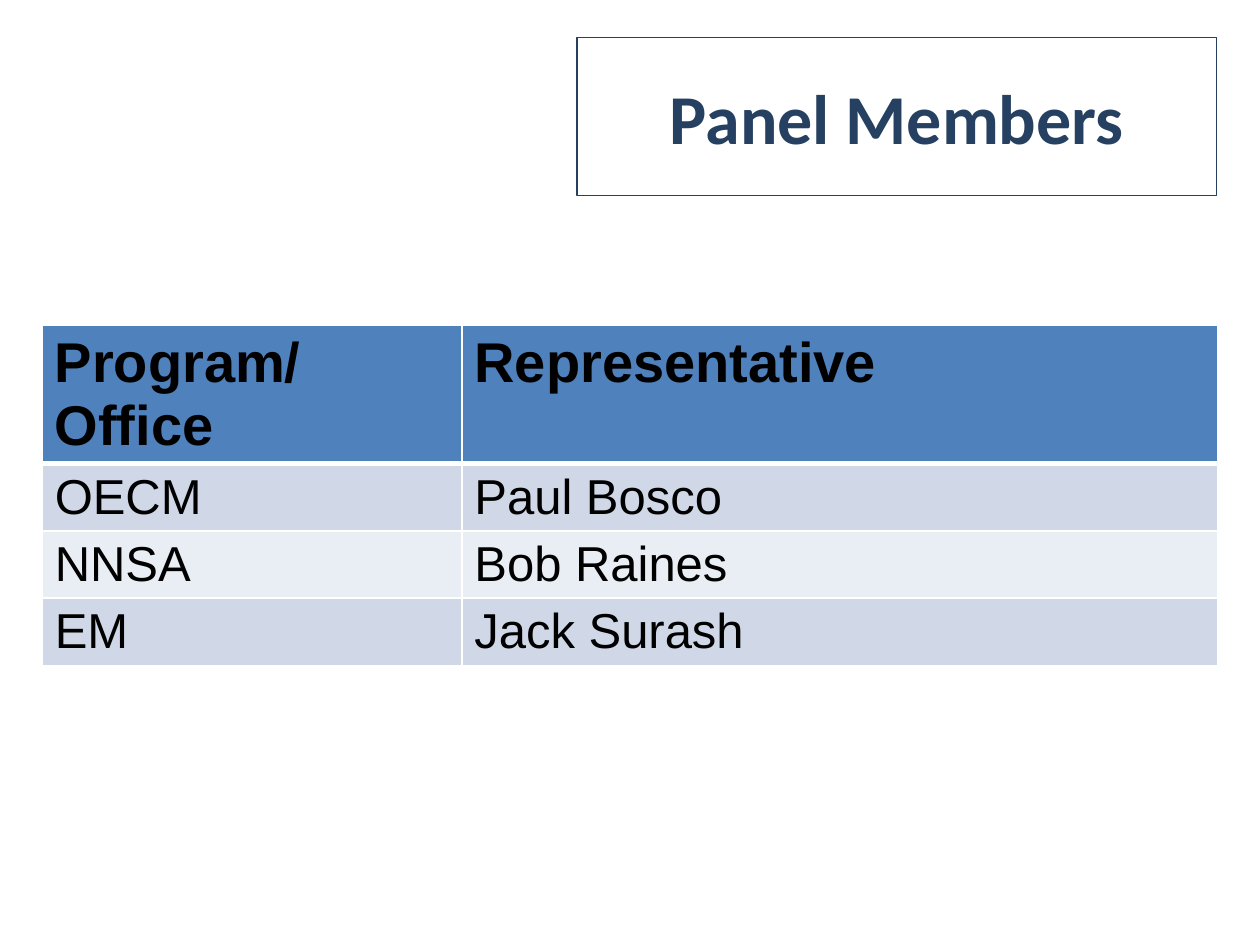
from lxml.etree import SubElement
from pptx import Presentation
from pptx.dml.color import RGBColor
from pptx.enum.text import MSO_ANCHOR, PP_ALIGN
from pptx.oxml.ns import qn
from pptx.util import Cm, Pt

NAVY = RGBColor(0x25, 0x40, 0x61)
BLUE = RGBColor(0x4F, 0x81, 0xBD)
BAND_DARK = RGBColor(0xD0, 0xD8, 0xE8)
BAND_LIGHT = RGBColor(0xE9, 0xED, 0xF4)
WHITE = RGBColor(0xFF, 0xFF, 0xFF)
BLACK = RGBColor(0, 0, 0)

MEMBERS = [
    ("Program/Office", "Representative"),
    ("OECM", "Paul Bosco"),
    ("NNSA", "Bob Raines"),
    ("EM", "Jack Surash"),
]


def write_text(tf, text, *, font, size, color, bold=False, align=PP_ALIGN.LEFT):
    p = tf.paragraphs[0]
    p.alignment = align
    r = p.add_run()
    r.text = text
    r.font.name = font
    r.font.size = Pt(size)
    r.font.bold = bold
    r.font.color.rgb = color


def set_borders(cell, color, bottom):
    """Draw 1 pt cell borders, with the bottom one in its own width."""
    tc_pr = cell._tc.get_or_add_tcPr()
    for i, (side, width) in enumerate(zip("LRTB", (1, 1, 1, bottom))):
        ln = SubElement(tc_pr, qn(f"a:ln{side}"), w=str(Pt(width)))
        fill = SubElement(ln, qn("a:solidFill"))
        SubElement(fill, qn("a:srgbClr"), val=str(color))
        tc_pr.insert(i, ln)


class SlideBuilder:
    title_font = "Calibri"
    body_font = "Arial"

    def __init__(self, prs):
        self.s = prs.slides.add_slide(prs.slide_layouts[5])

    def title(self, text, left, top, width, height):
        sp = self.s.shapes.title
        sp.left, sp.top, sp.width, sp.height = left, top, width, height
        sp.fill.solid()
        sp.fill.fore_color.rgb = WHITE
        sp.line.color.rgb = NAVY
        sp.line.width = Pt(0.75)
        sp.text_frame.vertical_anchor = MSO_ANCHOR.MIDDLE
        write_text(sp.text_frame, text, font=self.title_font, size=40,
                   color=NAVY, bold=True, align=PP_ALIGN.CENTER)

    def table(self, data, left, top, col_widths, row_heights):
        frame = self.s.shapes.add_table(len(data), len(col_widths), left, top,
                                        sum(col_widths), sum(row_heights))
        table = frame.table
        for col, width in zip(table.columns, col_widths):
            col.width = width
        for i, (row, values) in enumerate(zip(table.rows, data)):
            row.height = row_heights[i]
            header = i == 0
            color = BLUE if header else BAND_DARK if i % 2 else BAND_LIGHT
            for cell, value in zip(row.cells, values):
                cell.fill.solid()
                cell.fill.fore_color.rgb = color
                set_borders(cell, WHITE, bottom=3 if header else 1)
                write_text(cell.text_frame, value, font=self.body_font,
                           size=32 if header else 28, color=BLACK, bold=header)


def main():
    prs = Presentation()
    prs.slide_width, prs.slide_height = Cm(25.4), Cm(19.05)
    slide = SlideBuilder(prs)
    slide.title("Panel Members", Cm(11.63), Cm(0.76), Cm(12.9), Cm(3.18))
    slide.table(MEMBERS, Cm(0.85), Cm(6.56), [Cm(8.46), Cm(15.24)],
                [Cm(2.76)] + [Cm(1.35)] * 3)
    prs.save("out.pptx")


if __name__ == "__main__":
    main()
